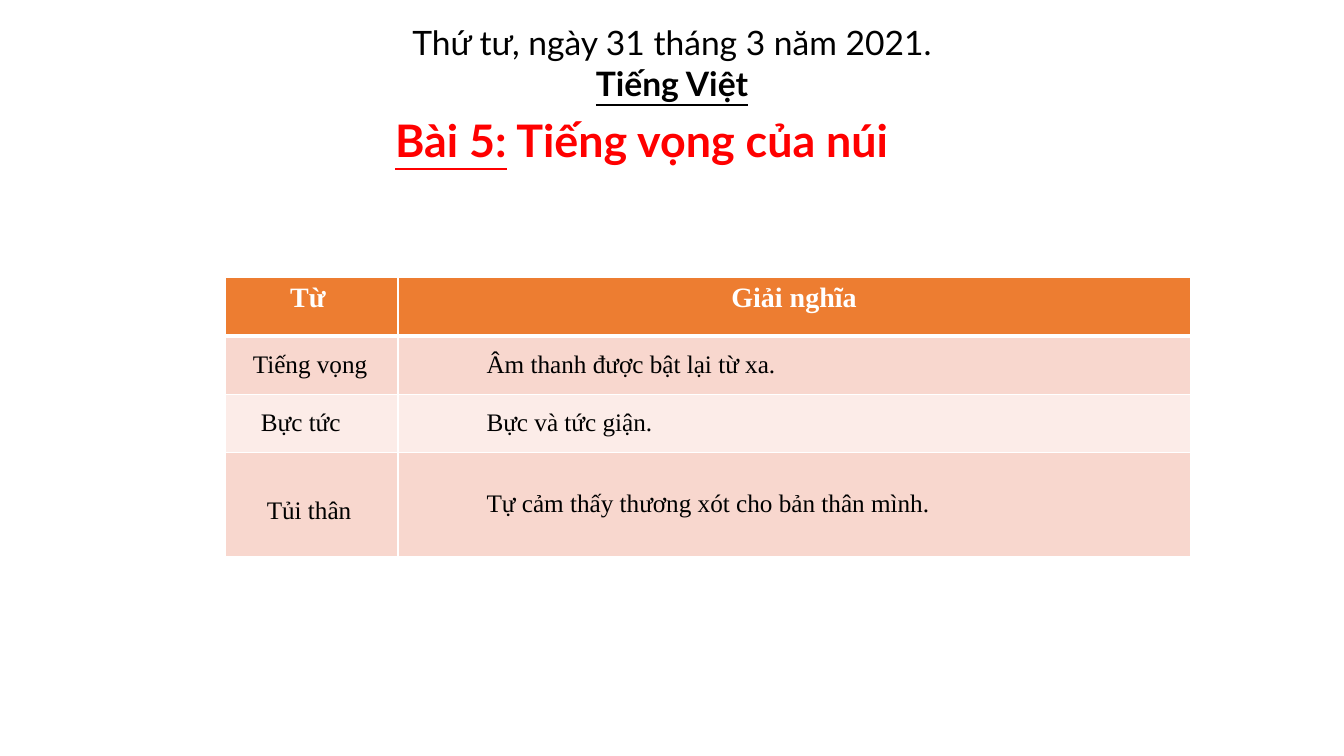
"""Build a vocabulary slide with a lesson title and a two-column word table."""
import pptx
import pptx.dml.color
import pptx.enum.text
import pptx.oxml
import pptx.oxml.ns
import pptx.util

Pt = pptx.util.Pt
CENTER = pptx.enum.text.PP_ALIGN.CENTER
SERIF, SANS = "Times New Roman", "Lato"


def rgb(value):
    return pptx.dml.color.RGBColor.from_string(value)


def style(p, size, name, color, bold=False):
    p.font.size, p.font.name, p.font.bold = Pt(size), name, bold
    p.font.color.rgb = rgb(color)


prs = pptx.Presentation()
prs.slide_width, prs.slide_height = Pt(960), Pt(540)
s = prs.slides.add_slide(prs.slide_layouts[5])

title = s.shapes.title
title.left, title.top, title.width, title.height = Pt(275), Pt(77), Pt(531.5), Pt(46)
tf = title.text_frame
tf.auto_size = pptx.enum.text.MSO_AUTO_SIZE.NONE
tf.vertical_anchor = pptx.enum.text.MSO_ANCHOR.TOP
p = tf.paragraphs[0]
p.alignment = pptx.enum.text.PP_ALIGN.LEFT
style(p, 32, SANS, "FF0000", True)
for text, underline in [("Bài 5:", True), (" Tiếng vọng của núi", False)]:
    r = p.add_run()
    r.text, r.font.underline = text, underline

tf = s.shapes.add_textbox(Pt(177), Pt(12.25), Pt(606), Pt(65.5)).text_frame
tf.word_wrap = True
tf.text = "Thứ tư, ngày 31 tháng 3 năm 2021.\nTiếng Việt"
for p, heading in zip(tf.paragraphs, (False, True)):
    p.alignment = CENTER
    style(p, 24, SANS, "000000", heading)
    p.font.underline = heading

row_fills = ["ED7D31", "F8D7CE", "FCECE8", "F8D7CE"]
row_heights = [41.75, 41.75, 41.75, 74.25]
table = s.shapes.add_table(4, 2, Pt(160.75), Pt(198.25), Pt(689.5), Pt(199.5)).table
for column, width in zip(table.columns, (123.5, 566)):
    column.width = Pt(width)
for i, (row, height, fill) in enumerate(zip(table.rows, row_heights, row_fills)):
    row.height = Pt(height)
    for cell in row.cells:
        tcPr = cell._tc.get_or_add_tcPr()
        for side in "LRTB":
            thick = (i, side) in [(0, "B"), (1, "T")]
            tcPr.append(pptx.oxml.parse_xml(
                f'<a:ln{side} {pptx.oxml.ns.nsdecls("a")} w="{Pt(3 if thick else 1)}">'
                '<a:solidFill><a:srgbClr val="FFFFFF"/></a:solidFill>'
                f'</a:ln{side}>'))
        cell.fill.solid()
        cell.fill.fore_color.rgb = rgb(fill)
for cell, text in zip(table.rows[0].cells, ("Từ ", "Giải nghĩa")):
    cell.text = text
    p = cell.text_frame.paragraphs[0]
    p.alignment = CENTER
    style(p, 20, SERIF, "FFFFFF", True)

entries = [
    ("Tiếng vọng", 173.5, 245.5, 111),
    ("Bực tức", 179.25, 286.5, 106),
    ("Tủi thân", 183.5, 349.25, 91.5),
    ("Âm thanh được bật lại từ xa.", 340.5, 245.5, 271),
    ("Bực và tức giận.", 340.5, 286.5, 183),
    ("Tự cảm thấy thương xót cho bản thân mình.", 340.5, 344.25, 340.5),
]
for text, left, top, width in entries:
    tf = s.shapes.add_textbox(Pt(left), Pt(top), Pt(width), Pt(29)).text_frame
    tf.word_wrap = True
    tf.text = text
    style(tf.paragraphs[0], 18, SERIF, "000000")

prs.save("out.pptx")
